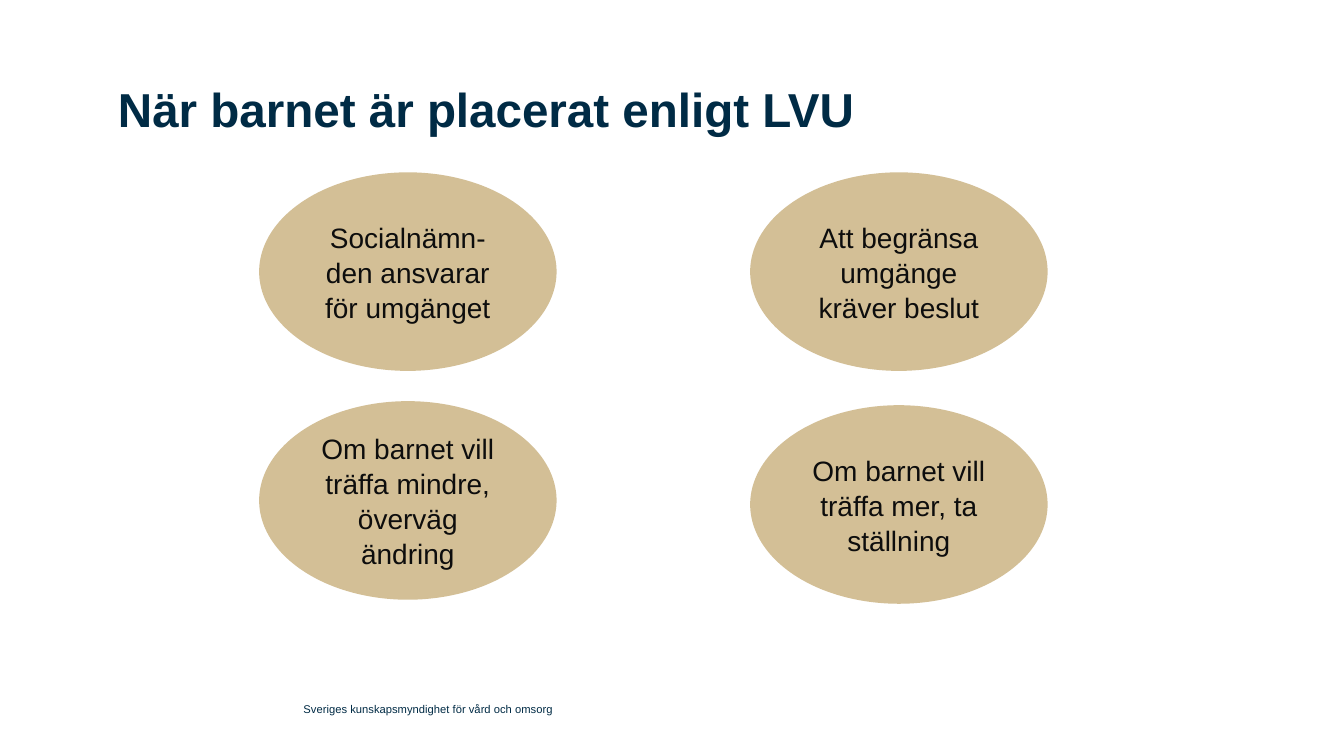
from dataclasses import dataclass

from pptx import Presentation
from pptx.dml.color import RGBColor
from pptx.enum.shapes import MSO_SHAPE
from pptx.enum.text import MSO_ANCHOR as ANCHOR, MSO_AUTO_SIZE as AUTO_SIZE, PP_ALIGN as ALIGN
from pptx.util import Inches, Pt

COLORS = {"navy": "002B45", "sand": "D3BF96", "ink": "0D0D0D"}
FONT = "Arial"

# Grid of ellipses, in inches
LEFT, TOP = 2.57, 1.71
COL_STEP, ROW_STEP = 4.87, 2.27
WIDTH, HEIGHT = 2.95, 1.97


@dataclass(frozen=True)
class Point:
    text: str
    col: int
    row: int
    drop: float = 0  # inches below the grid row


POINTS = [
    Point("Socialnämn-den ansvarar för umgänget", 0, 0),
    Point("Att begränsa umgänge kräver beslut", 1, 0),
    Point("Om barnet vill träffa mindre, överväg ändring", 0, 1),
    Point("Om barnet vill träffa mer, ta ställning", 1, 1, drop=0.04),
]


def rgb(name: str) -> RGBColor:
    return RGBColor.from_string(COLORS[name])


def write(tf, text: str, size: float, color: str, anchor=ANCHOR.TOP, align=ALIGN.LEFT,
          bold: bool = False, spacing: float = 1.0) -> None:
    tf.text = text
    tf.word_wrap = True
    tf.auto_size = AUTO_SIZE.NONE
    tf.vertical_anchor = anchor
    p = tf.paragraphs[0]
    p.alignment = align
    p.line_spacing = spacing
    p.font.name = FONT
    p.font.size = Pt(size)
    p.font.bold = bold
    p.font.color.rgb = rgb(color)


def clear_margins(tf) -> None:
    tf.margin_left = tf.margin_top = tf.margin_right = tf.margin_bottom = 0


def add_title(slide, text: str) -> None:
    sp = slide.shapes.title
    sp.left, sp.top, sp.width, sp.height = map(Inches, (1.17, 0.75, 9.96, 1.42))
    clear_margins(sp.text_frame)
    write(sp.text_frame, text, 34, "navy", bold=True, spacing=1.08)


def add_footer(slide, text: str) -> None:
    sp = slide.shapes.add_textbox(*map(Inches, (3.01, 6.89, 5.91, 0.29)))
    clear_margins(sp.text_frame)
    write(sp.text_frame, text, 8, "navy", anchor=ANCHOR.MIDDLE)


def add_point(slide, point: Point) -> None:
    left = LEFT + point.col * COL_STEP
    top = TOP + point.row * ROW_STEP + point.drop
    sp = slide.shapes.add_shape(MSO_SHAPE.OVAL, *map(Inches, (left, top, WIDTH, HEIGHT)))
    sp.shadow.inherit = False
    sp.fill.solid()
    sp.fill.fore_color.rgb = rgb("sand")
    sp.line.fill.background()
    write(sp.text_frame, point.text, 20, "ink", anchor=ANCHOR.MIDDLE, align=ALIGN.CENTER,
          spacing=1.04)


def main() -> None:
    prs = Presentation()
    prs.slide_width, prs.slide_height = Inches(13.33), Inches(7.5)
    slide = prs.slides.add_slide(prs.slide_layouts[5])
    add_title(slide, "När barnet är placerat enligt LVU")
    add_footer(slide, "Sveriges kunskapsmyndighet för vård och omsorg")
    for point in POINTS:
        add_point(slide, point)
    prs.save("out.pptx")


if __name__ == "__main__":
    main()
